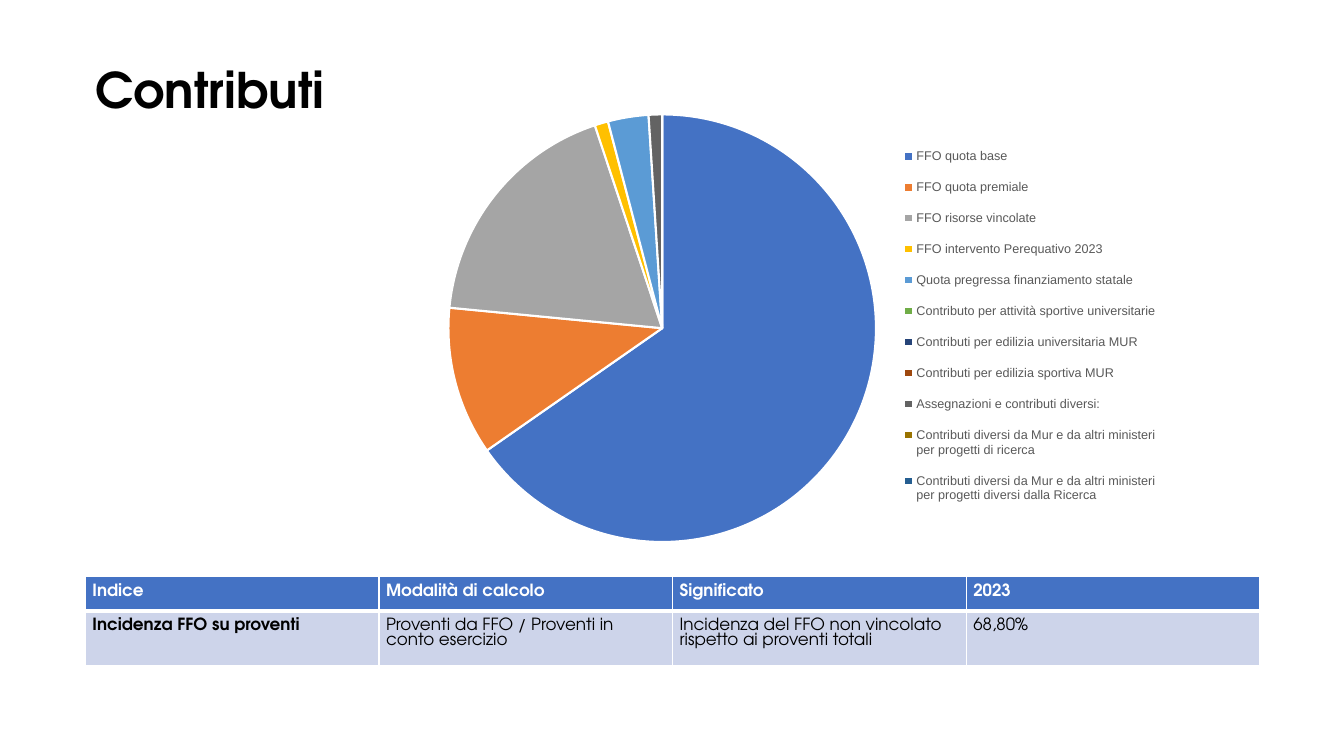
from dataclasses import dataclass

from pptx import Presentation
from pptx.chart.data import CategoryChartData
from pptx.dml.color import RGBColor as RGB
from pptx.enum.chart import XL_CHART_TYPE as Kind, XL_LEGEND_POSITION as Side
from pptx.enum.text import MSO_ANCHOR as Anchor
from pptx.oxml import parse_xml
from pptx.oxml.ns import nsdecls
from pptx.util import Pt


@dataclass(frozen=True)
class Theme:
    face: str = "TeX Gyre Adventor"
    plain: str = "Arial"
    head: float = 35
    body: float = 12
    chart: float = 10
    key: float = 9
    ink: str = "000000"
    paper: str = "FFFFFF"
    soft: str = "595959"
    band: str = "4472C4"
    tint: str = "CDD4EA"


T = Theme()

TITLE = "Contributi"
SHARES = [
    ("FFO quota base", 64, "4472C4"),
    ("FFO quota premiale", 11, "ED7D31"),
    ("FFO risorse vincolate", 18, "A5A5A5"),
    ("FFO intervento Perequativo 2023", 1, "FFC000"),
    ("Quota pregressa finanziamento statale", 3, "5B9BD5"),
    ("Contributo per attività sportive universitarie", 0, "70AD47"),
    ("Contributi per edilizia universitaria MUR", 0, "264478"),
    ("Contributi per edilizia sportiva MUR", 0, "9E480E"),
    ("Assegnazioni e contributi diversi:", 1, "636363"),
    ("Contributi diversi da Mur e da altri ministeri per progetti di ricerca",
     0, "997300"),
    ("Contributi diversi da Mur e da altri ministeri per progetti diversi "
     "dalla Ricerca", 0, "255E91"),
]
ROWS = [
    ["Indice", "Modalità di calcolo", "Significato", "2023"],
    ["Incidenza FFO su proventi",
     "Proventi da FFO / Proventi in conto esercizio",
     "Incidenza del FFO non vincolato rispetto ai proventi totali", "68,80%"],
]


def style(font, face, size, color, bold=False):
    font.name, font.size, font.bold = face, Pt(size), bold
    font.color.rgb = RGB.from_string(color)


def add_title(slide, box):
    frame = slide.shapes.add_textbox(*map(Pt, box)).text_frame
    frame.word_wrap = True
    frame.vertical_anchor = Anchor.TOP
    frame.text = TITLE
    line = frame.paragraphs[0]
    line.line_spacing = 0.9
    style(line.runs[0].font, T.face, T.head, T.ink, True)


def layout(x, y, w, h, inner=False):
    """Manual layout of a chart part, in fractions of the chart."""
    target = '<c:layoutTarget val="inner"/>' if inner else ""
    return parse_xml(
        f'<c:layout {nsdecls("c")}><c:manualLayout>{target}'
        '<c:xMode val="edge"/><c:yMode val="edge"/>'
        f'<c:x val="{x}"/><c:y val="{y}"/><c:w val="{w}"/><c:h val="{h}"/>'
        '</c:manualLayout></c:layout>')


def add_pie(slide, box):
    data = CategoryChartData()
    data.categories = [name for name, _, _ in SHARES]
    data.add_series("Series 1", [share for _, share, _ in SHARES])
    chart = slide.shapes.add_chart(Kind.PIE, *map(Pt, box), data).chart
    chart.has_title = False
    style(chart.font, T.plain, T.chart, T.ink)

    # Slices
    plot = chart.plots[0]
    plot.vary_by_categories = True
    for i, (_, _, color) in enumerate(SHARES):
        form = plot.series[0].points[i].format
        form.fill.solid()
        form.fill.fore_color.rgb = RGB.from_string(color)
        form.line.color.rgb = RGB.from_string(T.paper)
        form.line.width = Pt(1.5)
    area = chart.plots[0]._element.getparent()
    for old in area.findall("{*}layout"):
        area.remove(old)
    area.insert(0, layout(0.025, 0.03, 0.585, 0.94, True))

    # Legend
    chart.has_legend = True
    key = chart.legend
    key.position = Side.RIGHT
    key.include_in_layout = False
    style(key.font, T.plain, T.key, T.soft)
    for old in key._element.findall("{*}layout"):
        key._element.remove(old)
    key._element.find("{*}legendPos").addnext(
        layout(0.64, 0.07, 0.36, 0.85))


def edge(cell, side, width):
    cell._tc.get_or_add_tcPr().append(parse_xml(
        f'<a:ln{side} {nsdecls("a")} w="{Pt(width)}"><a:solidFill>'
        f'<a:srgbClr val="{T.paper}"/></a:solidFill></a:ln{side}>'))


def add_index(slide, box, tall):
    table = slide.shapes.add_table(
        len(ROWS), len(ROWS[0]), *map(Pt, box)).table
    for col in table.columns:
        col.width = Pt(box[2] / len(ROWS[0]))
    for r, words in enumerate(ROWS):
        table.rows[r].height = Pt(tall[r])
        top = r == 0
        for c, text in enumerate(words):
            cell = table.cell(r, c)
            # Borders come before the fill in the cell properties
            for side in "LRTB":
                heavy = side == ("B" if top else "T")
                edge(cell, side, 3 if heavy else 1)
            cell.fill.solid()
            cell.fill.fore_color.rgb = RGB.from_string(
                T.band if top else T.tint)
            cell.margin_left = cell.margin_right = Pt(5)
            cell.margin_top = cell.margin_bottom = Pt(5)
            cell.text_frame.text = text
            style(cell.text_frame.paragraphs[0].runs[0].font, T.face, T.body,
                  T.paper if top else T.ink, top or c == 0)


def main():
    deck = Presentation()
    deck.slide_width, deck.slide_height = Pt(960), Pt(540)
    slide = deck.slides.add_slide(deck.slide_layouts[6])
    add_title(slide, (61, 44, 839, 78))
    add_index(slide, (61, 412, 839, 52), (20.5, 31.5))
    add_pie(slide, (307, 72, 523, 325))
    deck.save("out.pptx")


if __name__ == "__main__":
    main()
